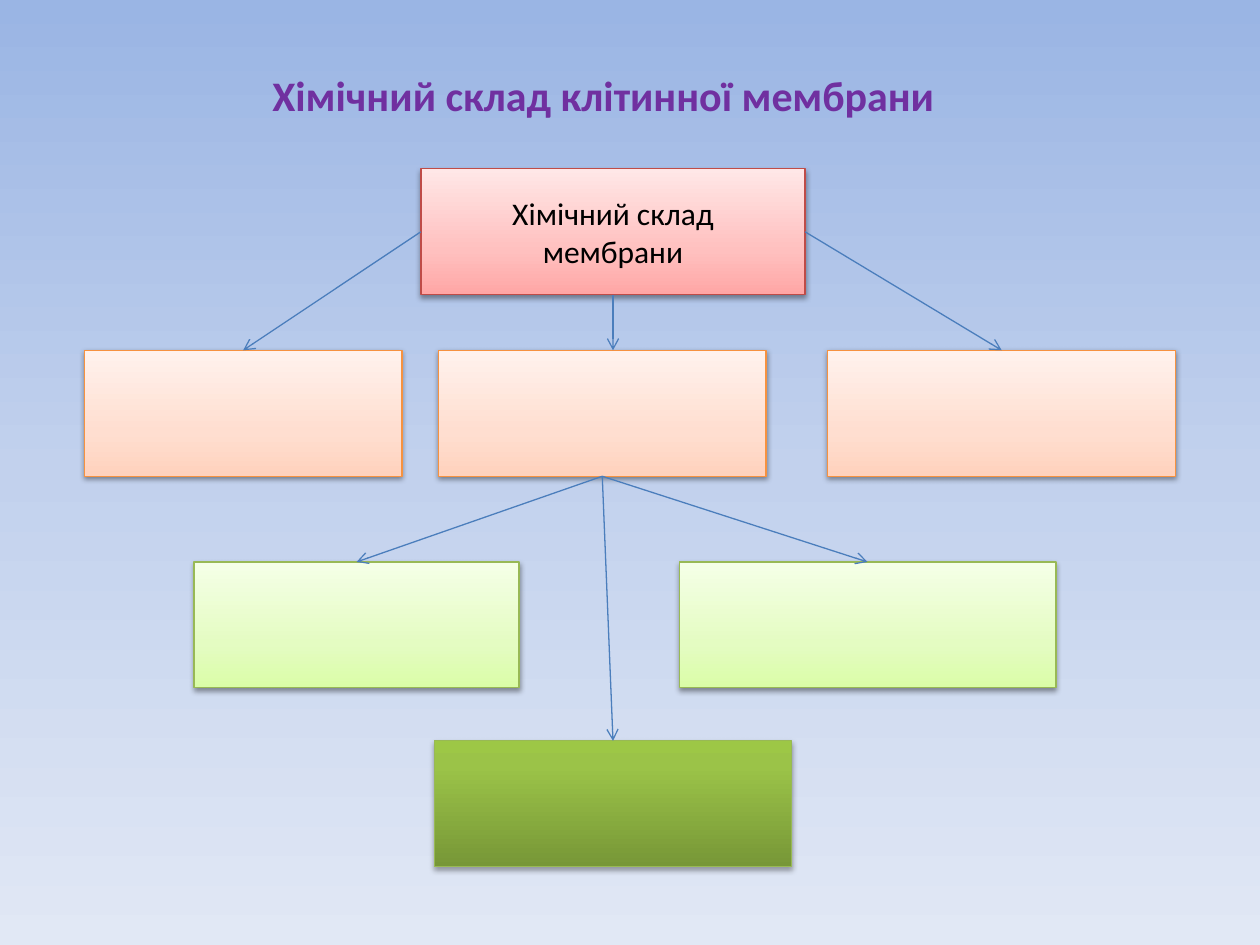
"""Build a slide with the chemical make-up of the cell membrane as a tree."""
from dataclasses import dataclass
from lxml.etree import SubElement
from pptx import Presentation
from pptx.dml.color import RGBColor
from pptx.enum.shapes import MSO_CONNECTOR, MSO_SHAPE
from pptx.enum.text import MSO_ANCHOR, PP_ALIGN
from pptx.oxml.ns import qn
from pptx.util import Inches, Pt


@dataclass(frozen=True)
class Theme:
    font: str = "Calibri"
    head: int = 24
    body: int = 18
    title: str = "7030A0"
    text: str = "000000"
    arrow: str = "4B7EBC"
    line: float = 0.75
    sky: tuple = ((0, "9AB5E4"), (50, "C2D1ED"), (100, "E1E8F5"))


THEME = Theme()
TITLE = "Хімічний склад клітинної мембрани"
STYLES = {
    "red": ("BF4C48", ((0, "FFA6A5"), (35, "FFC0BF"), (100, "FFE7E7")), 38, 1.6),
    "orange": ("F69240", ((0, "FFD2BD"), (35, "FFDED0"), (100, "FFF2ED")), 38, 1.6),
    "lime": ("98B955", ((0, "DAFDA7"), (35, "E4FCC2"), (100, "F5FFE7")), 38, 1.6),
    "green": ("98B955", ((0, "779737"), (80, "9BC348"), (100, "9DC746")), 35, 1.8),
}
ROWS = (1.34, 2.78, 4.46, 5.88)
HIGH = 1
BOXES = {
    "root": (0, 3.34, 3.05, "red", ("Хімічний склад", "мембрани")),
    "left": (1, 0.67, 2.52, "orange", ()),
    "mid": (1, 3.48, 2.6, "orange", ()),
    "right": (1, 6.57, 2.76, "orange", ()),
    "low left": (2, 1.54, 2.58, "lime", ()),
    "low right": (2, 5.39, 2.99, "lime", ()),
    "base": (3, 3.45, 2.83, "green", ()),
}
TOP, LEFT, BOTTOM, RIGHT = range(4)
LINKS = (
    ("root", LEFT, "left"),
    ("root", RIGHT, "right"),
    ("mid", BOTTOM, "low left"),
    ("mid", BOTTOM, "low right"),
    ("mid", BOTTOM, "base"),
)


def add(node, tag, **attrs):
    return SubElement(node, qn(tag), {key: str(val) for key, val in attrs.items()})


def blend(fill, node, stops, angle):
    fill.solid()
    flat = node.find(".//" + qn("a:solidFill"))
    home = flat.getparent()
    grad = add(home, "a:gradFill", rotWithShape=1)
    parts = add(grad, "a:gsLst")
    for share, color in stops:
        add(add(parts, "a:gs", pos=share * 1000), "a:srgbClr", val=color)
    add(grad, "a:lin", ang=angle * 60000, scaled=0)
    home.replace(flat, grad)


def write(frame, lines, size, color, bold=False):
    frame.word_wrap = True
    frame.vertical_anchor = MSO_ANCHOR.MIDDLE
    frame.text = "\n".join(lines)
    for para in frame.paragraphs:
        para.alignment = PP_ALIGN.CENTER
        font = para.font
        font.name, font.size, font.bold = THEME.font, Pt(size), bold
        font.color.rgb = RGBColor.from_string(color)


def stroke(line, color):
    line.color.rgb = RGBColor.from_string(color)
    line.width = Pt(THEME.line)


def draw_box(slide, row, left, wide, style, lines):
    edge, stops, alpha, drop = STYLES[style]
    box = slide.shapes.add_shape(
        MSO_SHAPE.RECTANGLE, *map(Inches, (left, ROWS[row], wide, HIGH)))
    props = box._element.spPr
    blend(box.fill, props, stops, 270)
    stroke(box.line, edge)
    box.shadow.inherit = False
    shade = add(props.find(qn("a:effectLst")), "a:outerShdw", blurRad=Pt(3.1),
                dist=Pt(drop), dir=90 * 60000, rotWithShape=0)
    add(add(shade, "a:srgbClr", val="000000"), "a:alpha", val=alpha * 1000)
    if lines:
        write(box.text_frame, lines, THEME.body, THEME.text)
    return box


def draw_arrow(slide, start, side, goal=None):
    mid = start.left + start.width // 2
    foot = start.top + start.height
    arrow = slide.shapes.add_connector(
        MSO_CONNECTOR.STRAIGHT, mid, foot, mid, Inches(ROWS[1]))
    arrow.begin_connect(start, side)
    if goal is not None:
        arrow.end_connect(goal, TOP)
    stroke(arrow.line, THEME.arrow)
    add(arrow.line._get_or_add_ln(), "a:tailEnd", type="arrow")
    add(arrow._element.spPr, "a:effectLst")


def main():
    deck = Presentation()
    deck.slide_width, deck.slide_height = Inches(10), Inches(7.5)
    slide = deck.slides.add_slide(deck.slide_layouts[5])
    blend(slide.background.fill, slide._element, THEME.sky, 90)

    title = slide.shapes.title
    title.left, title.top, title.width, title.height = map(
        Inches, (1.38, 0.44, 6.46, 0.63))
    write(title.text_frame, [TITLE], THEME.head, THEME.title, True)
    title.text_frame.margin_left = Inches(0.46)

    boxes = {name: draw_box(slide, *data) for name, data in BOXES.items()}
    draw_arrow(slide, boxes["root"], BOTTOM)
    for start, side, goal in LINKS:
        draw_arrow(slide, boxes[start], side, boxes[goal])
    deck.save("out.pptx")


if __name__ == "__main__":
    main()
